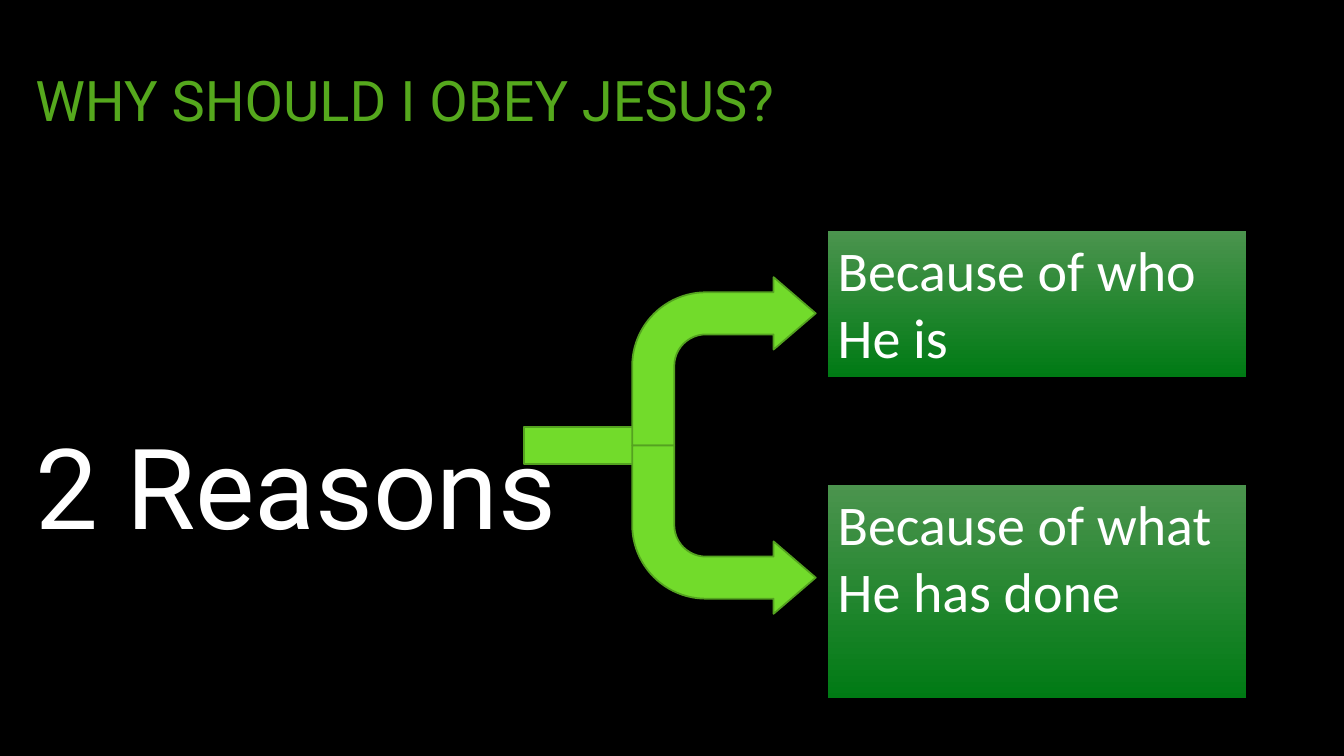
from pptx import Presentation
from pptx.dml.color import RGBColor
from pptx.enum.shapes import MSO_SHAPE
from pptx.enum.text import MSO_ANCHOR, MSO_AUTO_SIZE, PP_ALIGN
from pptx.oxml.ns import qn
from pptx.util import Inches, Pt
from lxml import etree

# Content
TITLE = "WHY SHOULD I OBEY JESUS?"
BODY = "2 Reasons"
REASONS = [  # text, top, height
    ("Because of who He is", 2.29, 1.45),
    ("Because of what He has done", 4.81, 2.12),
]

BLACK = RGBColor(0x00, 0x00, 0x00)
WHITE = RGBColor(0xFF, 0xFF, 0xFF)
TITLE_GREEN = RGBColor(0x55, 0xA8, 0x1D)
ARROW_FILL = RGBColor(0x72, 0xDB, 0x2B)
ARROW_LINE = RGBColor(0x54, 0xA2, 0x20)
BOX_TOP = RGBColor(0x4B, 0x94, 0x4E)
BOX_BOTTOM = RGBColor(0x00, 0x7A, 0x14)

# Layout in inches
BOX_LEFT, BOX_WIDTH = 8.21, 4.15
FORK_LEFT, FORK_MIDDLE = 6.27, 4.42
ARROW_WIDTH, ARROW_HEIGHT = 1.82, 1.67
ARROW_ADJUSTMENTS = (0.25, 0.215, 0.25, 0.438)
STEM_LEFT, STEM_WIDTH, STEM_HEIGHT = 5.2, 1.46, 0.37

prs = Presentation()
prs.slide_width, prs.slide_height = Inches(13.33), Inches(7.5)
s = prs.slides.add_slide(prs.slide_layouts[1])
s.background.fill.solid()
s.background.fill.fore_color.rgb = BLACK


def place(sp, left, top, width, height):
    sp.left, sp.top = Inches(left), Inches(top)
    sp.width, sp.height = Inches(width), Inches(height)


def write(sp, text, size, font, color, anchor=MSO_ANCHOR.TOP):
    tf = sp.text_frame
    tf.word_wrap = True
    tf.auto_size = MSO_AUTO_SIZE.NONE
    tf.vertical_anchor = anchor
    p = tf.paragraphs[0]
    p.alignment = PP_ALIGN.LEFT
    p.space_before = Pt(0)
    r = p.add_run()
    r.text = text
    r.font.size, r.font.name = Pt(size), font
    r.font.color.rgb = color
    return p


def add_shape(kind, left, top, width, height):
    sp = s.shapes.add_shape(kind, Inches(left), Inches(top),
                            Inches(width), Inches(height))
    sp.shadow.inherit = False
    return sp


def paint_arrow(sp):
    sp.fill.solid()
    sp.fill.fore_color.rgb = ARROW_FILL
    sp.line.color.rgb = ARROW_LINE
    sp.line.width = Pt(1.25)


# Title
title = s.shapes.title
place(title, 0.25, 0.22, 12.9, 1.62)
p = write(title, TITLE, 40, "Roboto", TITLE_GREEN, MSO_ANCHOR.MIDDLE)
p.line_spacing = 0.9

# Body, lowered to stand beside the fork
body = s.placeholders[1]
place(body, 0.25, 1.97, 12.9, 4.96)
body.text_frame.margin_top = Inches(2.17)
p = write(body, BODY, 80, "Roboto", WHITE)
pPr = p._p.get_or_add_pPr()
pPr.set("marL", "0")
pPr.set("indent", "0")
etree.SubElement(pPr, qn("a:buNone"))

# Reason boxes
for text, top, height in REASONS:
    box = add_shape(MSO_SHAPE.RECTANGLE, BOX_LEFT, top, BOX_WIDTH, height)
    box.fill.gradient()
    box.fill.gradient_angle = 270
    for stop, color, position in zip(box.fill.gradient_stops,
                                     (BOX_TOP, BOX_BOTTOM), (0, 1)):
        stop.color.rgb = color
        stop.position = position
    box.line.fill.background()
    write(box, text, 40, "Calibri", WHITE)

# Fork: a stem and two mirrored bent arrows
stem = add_shape(MSO_SHAPE.RECTANGLE, STEM_LEFT, FORK_MIDDLE - STEM_HEIGHT / 2,
                 STEM_WIDTH, STEM_HEIGHT)
paint_arrow(stem)
for top, flipped in ((FORK_MIDDLE - ARROW_HEIGHT, False), (FORK_MIDDLE, True)):
    arrow = add_shape(MSO_SHAPE.BENT_ARROW, FORK_LEFT, top,
                      ARROW_WIDTH, ARROW_HEIGHT)
    for i, value in enumerate(ARROW_ADJUSTMENTS):
        arrow.adjustments[i] = value
    paint_arrow(arrow)
    if flipped:
        arrow._element.spPr.find(qn("a:xfrm")).set("flipV", "1")

prs.save("out.pptx")
